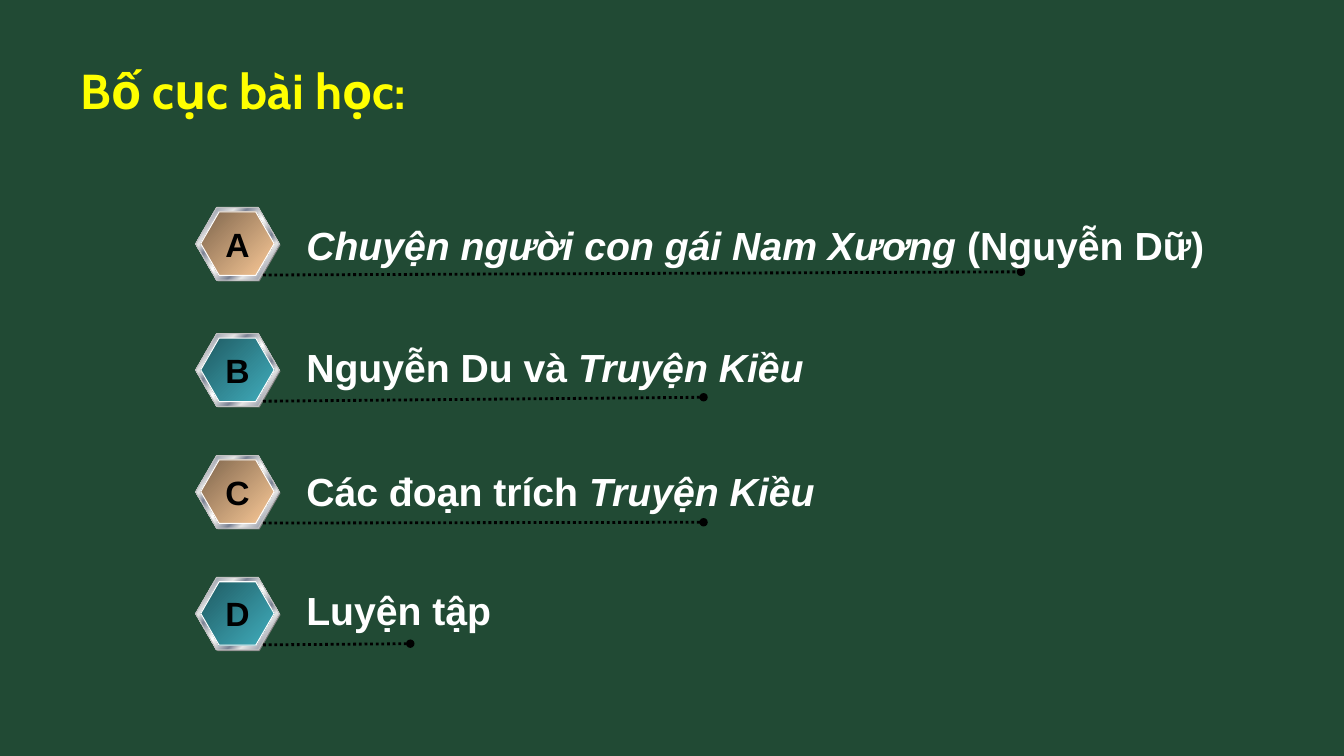
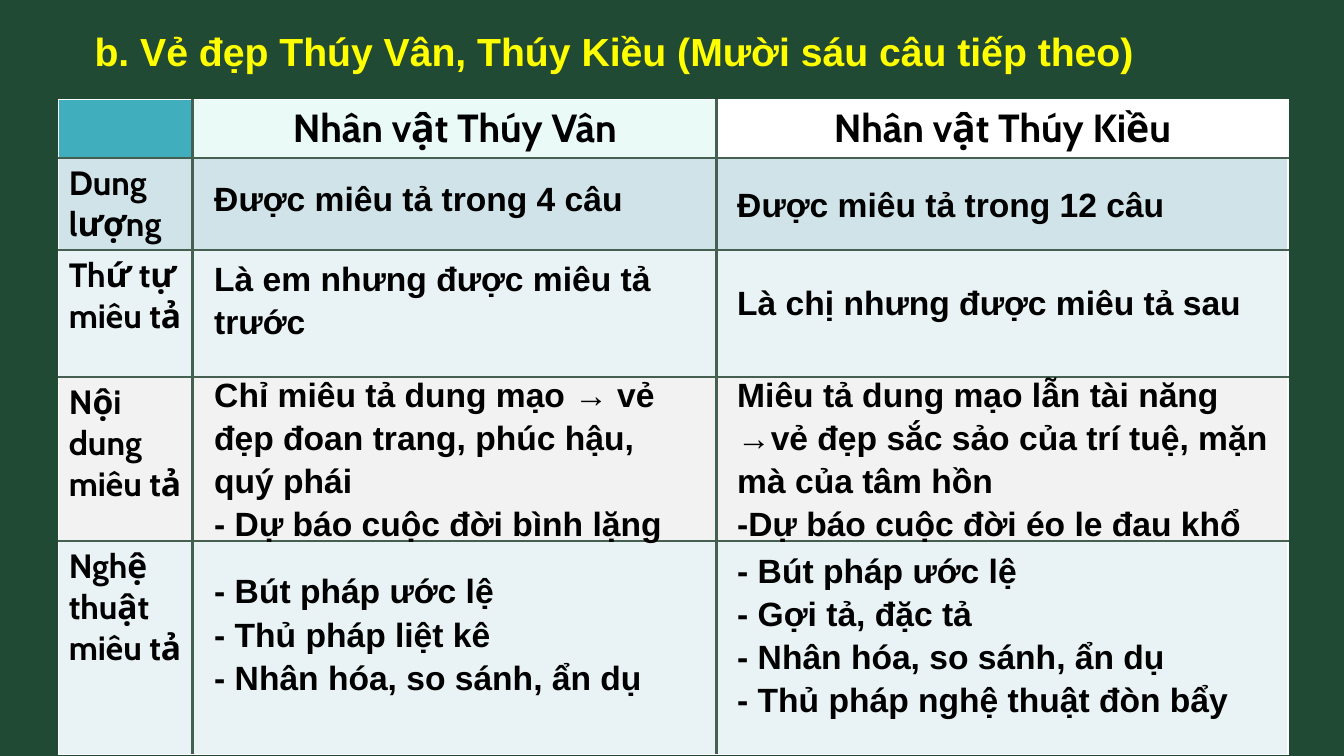
from lxml.etree import SubElement as Sub
from pptx import Presentation
from pptx.dml.color import RGBColor as Rgb
from pptx.enum.dml import MSO_LINE as Dash
from pptx.enum.shapes import MSO_CONNECTOR as Link, MSO_SHAPE as Form
from pptx.enum.text import MSO_ANCHOR as Anchor, PP_ALIGN as Align
from pptx.oxml.ns import qn
from pptx.util import Cm, Pt

HUES = {
    "board": "214A34", "title": "FFFF00", "white": "FFFFFF", "ink": "000000",
    "shade": "808080", "rim": "C0C0C0", "grid": "455F51", "teal": "41AEBD",
    "mint": "EAFBF7", "blue": "CFE3E8", "pale": "E9F2F4", "grey": "F2F2F2",
}
STEEL = [(0, "E6E6E6"), (7, "7D8496"), (26, "E6E6E6"), (34, "7D8496"),
         (46, "E6E6E6"), (50, "FFFFFF"), (54, "E6E6E6"), (66, "7D8496"),
         (74, "E6E6E6"), (93, "7D8496"), (100, "E6E6E6")]
BRONZE = [(0, "7F664D"), (100, "FBCA98")]
SEA = [(0, "1F5A62"), (100, "41AEBD")]

# Font formats
HEAD = {"name": "Cabin", "size": Pt(35), "bold": True}
TOPIC = {"name": "Arial", "size": Pt(28), "bold": True}
ITEM = TOPIC
MARK = {"name": "Arial", "size": Pt(24), "bold": True}
COLUMN = {"name": "Cabin", "size": Pt(28), "bold": True}
ROW = {"name": "Cabin", "size": Pt(24), "bold": True}
BODY = MARK

FLAT = {"margin_left": 0, "margin_right": 0, "margin_top": 0, "margin_bottom": 0}

# Top, fill, letter, text runs (text, italic), text drop, line end and rise
ITEMS = [
    (5.23, BRONZE, "A", [("Chuyện người con gái Nam Xương ", True),
                         ("(Nguyễn Dữ)", False)], 0.21, 25.73, 0.08),
    (8.41, SEA, "B", [("Nguyễn Du và ", False), ("Truyện Kiều", True)],
     0.11, 17.73, 0.1),
    (11.48, BRONZE, "C", [("Các đoạn trích ", False), ("Truyện Kiều", True)],
     0.16, 17.73, 0.02),
    (14.55, SEA, "D", [("Luyện tập", False)], 0.11, 10.34, 0.03),
]

# Height, fills and texts of the table rows
ROWS = [
    (1.47, ("teal", "mint", "white"),
     ("", "Nhân vật Thúy Vân", "Nhân vật Thúy Kiều")),
    (2.32, ("blue",) * 3, ("Dung lượng", "", "")),
    (3.2, ("pale",) * 3, ("Thứ tự miêu tả", "", "")),
    (4.13, ("grey",) * 3, ("Nội dung miêu tả", "", "")),
    (5.39, ("pale",) * 3, ("Nghệ thuật miêu tả", "", "")),
]
WIDTHS = (3.38, 13.2, 14.4)

# Notes over the table: left and width of each column, then for each
# column the tops below the table top, heights and texts
NOTES = [
    (3.67, 12.3, [
        (1.63, 1.65, "Được miêu tả trong 4 câu"),
        (3.97, 2.08, "Là em nhưng được miêu tả trước"),
        (7.17, 3.68, "Chỉ miêu tả dung mạo → vẻ đẹp đoan trang, phúc hậu, "
                     "quý phái\n- Dự báo cuộc đời bình lặng"),
        (11.53, 3.78, "- Bút pháp ước lệ\n- Thủ pháp liệt kê\n"
                      "- Nhân hóa, so sánh, ẩn dụ"),
    ]),
    (16.85, 14, [
        (1.6, 2.01, "Được miêu tả trong 12 câu"),
        (4.02, 2.08, "Là chị nhưng được miêu tả sau"),
        (7.17, 3.68, "Miêu tả dung mạo lẫn tài năng →vẻ đẹp sắc sảo của trí "
                     "tuệ, mặn mà của tâm hồn\n-Dự báo cuộc đời éo le đau khổ"),
        (11.56, 3.78, "- Bút pháp ước lệ\n- Gợi tả, đặc tả\n"
                      "- Nhân hóa, so sánh, ẩn dụ\n- Thủ pháp nghệ thuật đòn bẩy"),
    ]),
]


def hue(name):
    return Rgb.from_string(HUES[name])


def apply(thing, vals):
    for key, val in vals.items():
        setattr(thing, key, val)


def write(para, text, style, color, **more):
    run = para.add_run()
    run.text = text
    apply(run.font, {**style, **more})
    run.font.color.rgb = hue(color)


def place(shape, box):
    names = ("left", "top", "width", "height")
    apply(shape, dict(zip(names, map(Cm, box))))


def add_title(slide, text, style, box):
    shape = slide.shapes.title
    place(shape, box)
    frame = shape.text_frame
    apply(frame, {"vertical_anchor": Anchor.MIDDLE, "word_wrap": True})
    para = frame.paragraphs[0]
    apply(para, {"alignment": Align.LEFT, "line_spacing": 0.9})
    write(para, text, style, "title")


def blend(shape, stops):
    shape.fill.gradient()
    shape.fill.gradient_angle = 315
    tag = shape._element.spPr.find(qn("a:gradFill")).find(qn("a:gsLst"))
    for old in list(tag):
        tag.remove(old)
    for pos, color in stops:
        stop = Sub(tag, qn("a:gs"), pos=str(pos * 1000))
        Sub(stop, qn("a:srgbClr"), val=color)


def add_hex(shapes, box, stops=None, edge=None):
    shape = shapes.add_shape(Form.HEXAGON, *map(Cm, box))
    shape.shadow.inherit = False
    shape.adjustments[0] = 0.289
    if stops:
        blend(shape, stops)
    else:
        shape.fill.solid()
        shape.fill.fore_color.rgb = hue("shade")
    if edge:
        shape.line.color.rgb = hue(edge)
        shape.line.width = Pt(0.75)
    else:
        shape.line.fill.background()
    return shape


def add_dots(shapes, left, y, right, rise):
    link = shapes.add_connector(
        Link.STRAIGHT, *map(Cm, (left, y, right, y - rise)))
    apply(link.line, {"width": Pt(2), "dash_style": Dash.ROUND_DOT})
    link.line.color.rgb = hue("ink")
    props = link._element.spPr
    Sub(props.find(qn("a:ln")), qn("a:tailEnd"), type="oval")
    Sub(props, qn("a:effectLst"))


def add_item(slide, left, top, stops, letter, runs, drop, end, rise):
    shapes = slide.shapes.add_group_shape().shapes
    # Badge: shade, steel rim, coloured face
    add_hex(shapes, (left + 0.03, top + 0.03, 2.11, 1.83))
    add_hex(shapes, (left, top, 2.11, 1.83), STEEL, "rim")
    face = add_hex(shapes, (left + 0.13, top + 0.11, 1.85, 1.6), stops, "white")
    frame = face.text_frame
    apply(frame, {**FLAT, "word_wrap": False, "vertical_anchor": Anchor.MIDDLE})
    para = frame.paragraphs[0]
    para.alignment = Align.CENTER
    write(para, letter, MARK, "ink")
    # Dotted line and text
    add_dots(shapes, left + 1.7, top + 1.7, end, rise)
    label = shapes.add_textbox(*map(Cm, (left + 2.54, top + drop, 23.4, 1.45)))
    label.text_frame.word_wrap = False
    for text, slant in runs:
        write(label.text_frame.paragraphs[0], text, ITEM, "white", italic=slant)


def add_edges(cell, row, col):
    outer = {"L": col == 0, "R": col == len(WIDTHS) - 1,
             "T": row == 0, "B": row == len(ROWS) - 1}
    props = cell._tc.get_or_add_tcPr()
    for side, rim in outer.items():
        edge = Sub(props, qn("a:ln" + side), w=str(Pt(1 if rim else 2.25)))
        fill = Sub(edge, qn("a:solidFill"))
        Sub(fill, qn("a:srgbClr"), val=HUES["white" if rim else "grid"])


def fill_cell(cell, row, col, color, text):
    add_edges(cell, row, col)
    cell.fill.solid()
    cell.fill.fore_color.rgb = hue(color)
    cell.margin_right = Cm(0.25 if row == 0 else 0.13)
    if text:
        para = cell.text_frame.paragraphs[0]
        para.alignment = Align.LEFT if row else Align.CENTER
        write(para, text, ROW if row else COLUMN, "ink")


def add_grid(slide, left, top):
    size = sum(WIDTHS), sum(row[0] for row in ROWS)
    table = slide.shapes.add_table(
        len(ROWS), len(WIDTHS), *map(Cm, (left, top, *size))).table
    apply(table, {"first_row": False, "horz_banding": False})
    for col, width in enumerate(WIDTHS):
        table.columns[col].width = Cm(width)
    for row, (height, fills, texts) in enumerate(ROWS):
        table.rows[row].height = Cm(height)
        for col, (color, text) in enumerate(zip(fills, texts)):
            fill_cell(table.cell(row, col), row, col, color, text)


def add_note(slide, box, text):
    frame = slide.shapes.add_textbox(*map(Cm, box)).text_frame
    apply(frame, {"word_wrap": True, "vertical_anchor": Anchor.MIDDLE})
    for num, line in enumerate(text.split("\n")):
        para = frame.add_paragraph() if num else frame.paragraphs[0]
        para.line_spacing = 1.07
        write(para, line, BODY, "ink")


def outline(slide):
    add_title(slide, "Bố cục bài học:", HEAD, (1.78, 0.53, 29.21, 3.68))
    for item in ITEMS:
        add_item(slide, 4.93, *item)


def compare(slide):
    add_title(slide, "b. Vẻ đẹp Thúy Vân, Thúy Kiều (Mười sáu câu tiếp theo)",
              TOPIC, (2.13, 0.45, 29.21, 1.8))
    left, top = 1.48, 2.51
    add_grid(slide, left, top)
    for shift, width, notes in NOTES:
        for drop, height, text in notes:
            add_note(slide, (left + shift, top + drop, width, height), text)


def main():
    prs = Presentation()
    apply(prs, {"slide_width": Cm(33.87), "slide_height": Cm(19.05)})
    back = prs.slide_master.background.fill
    back.solid()
    back.fore_color.rgb = hue("board")
    for build in (outline, compare):
        build(prs.slides.add_slide(prs.slide_layouts[5]))
    prs.save("out.pptx")


if __name__ == "__main__":
    main()
